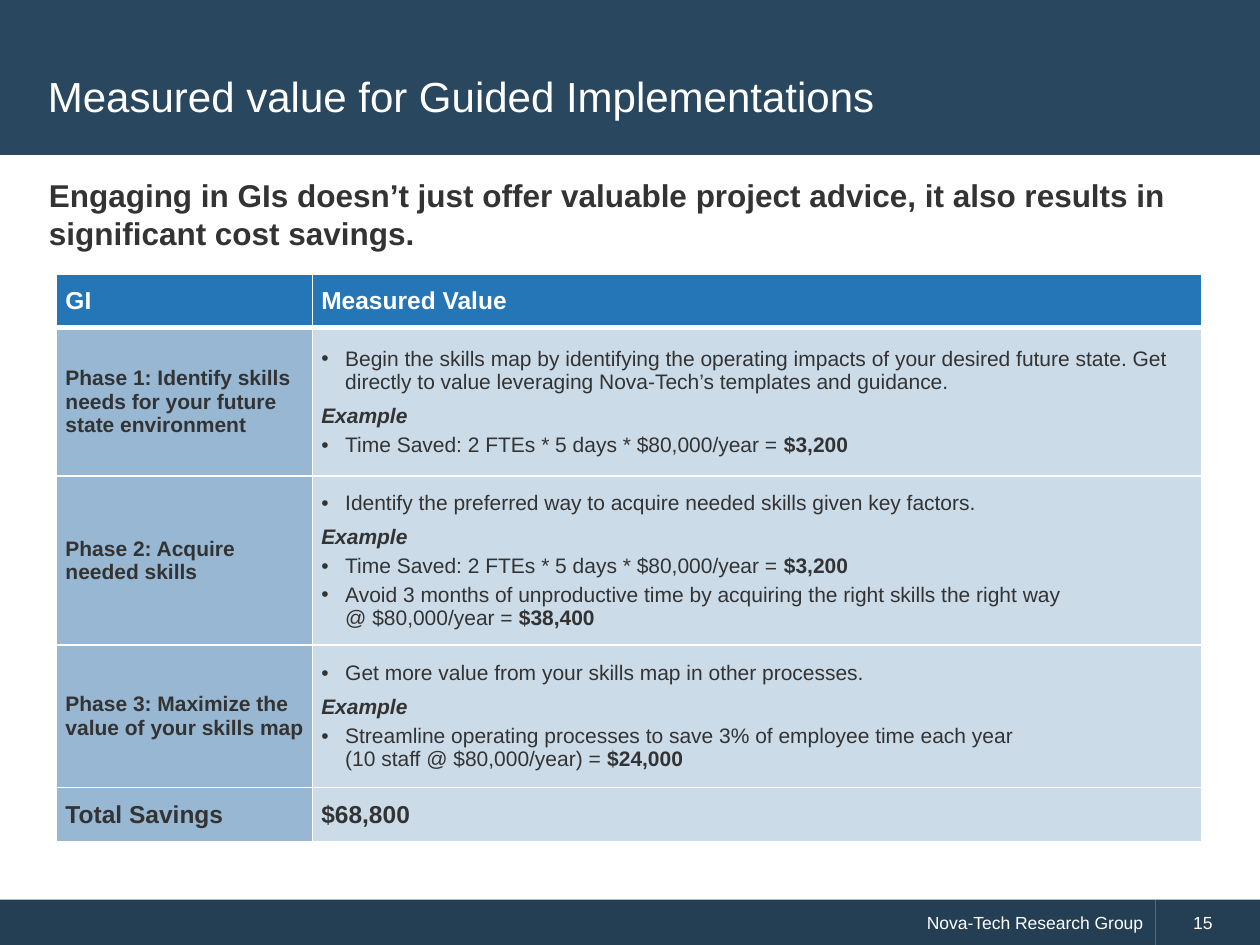
from lxml import etree
from pptx import Presentation
from pptx import util as u
from pptx.dml.color import RGBColor
from pptx.enum import shapes, text
from pptx.oxml import ns

COLORS = {
    "white": "FFFFFF", "ink": "333333", "title_band": "29475F", "footer": "243F54",
    "header": "2576B7", "phase": "97B7D2", "value": "CBDBE8",
}
FONT = "Arial"
COLUMN_WIDTHS = [2.03, 7.06]
ROW_HEIGHTS = [0.42, 1.18, 1.34, 1.13, 0.43]
TIME_SAVED = ("Time Saved: 2 FTEs * 5 days * $80,000/year = ", "$3,200")

# Each phase: name, introduction, then examples as (calculation, saving)
PHASES = [
    ("Phase 1: Identify skills needs for your future state environment",
     "Begin the skills map by identifying the operating impacts of your desired "
     "future state. Get directly to value leveraging Nova-Tech’s templates and guidance.",
     [TIME_SAVED]),
    ("Phase 2: Acquire needed skills",
     "Identify the preferred way to acquire needed skills given key factors.",
     [TIME_SAVED,
      ("Avoid 3 months of unproductive time by acquiring the right skills the right way "
       "\n@ $80,000/year = ", "$38,400")]),
    ("Phase 3: Maximize the value of your skills map",
     "Get more value from your skills map in other processes.",
     [("Streamline operating processes to save 3% of employee time each year "
       "\n(10 staff @ $80,000/year) = ", "$24,000")]),
]


def rgb(name):
    return RGBColor.from_string(COLORS[name])


def style(font, size, color, bold=None):
    font.name, font.size, font.bold = FONT, u.Pt(size), bold
    font.color.rgb = rgb(color)


def place(shape, left, top, width, height):
    shape.left, shape.top = u.Inches(left), u.Inches(top)
    shape.width, shape.height = u.Inches(width), u.Inches(height)


def add_band(slide, left, top, width, height, color, label="", align=text.PP_ALIGN.LEFT):
    band = slide.shapes.add_shape(
        shapes.MSO_SHAPE.RECTANGLE, *map(u.Inches, (left, top, width, height)))
    band.shadow.inherit = False
    band.fill.solid()
    band.fill.fore_color.rgb = rgb(color)
    band.line.fill.background()
    if label:
        band.text_frame.vertical_anchor = text.MSO_ANCHOR.MIDDLE
        paragraph = band.text_frame.paragraphs[0]
        paragraph.text, paragraph.alignment = label, align
        style(paragraph.font, 10, "white")
    return band


def add_title(slide, wording):
    title = slide.shapes.title
    place(title, 0.28, 0.28, 9.43, 0.96)
    title.text_frame.vertical_anchor = text.MSO_ANCHOR.MIDDLE
    paragraph = title.text_frame.paragraphs[0]
    paragraph.text, paragraph.alignment = wording, text.PP_ALIGN.LEFT
    style(paragraph.font, 24, "white")


def add_heading(slide, wording):
    heading = slide.shapes.add_textbox(*map(u.Inches, (0.29, 1.35, 9.43, 0.72)))
    heading.text_frame.word_wrap = True
    paragraph = heading.text_frame.paragraphs[0]
    paragraph.text, paragraph.space_before = wording, u.Pt(3.6)
    style(paragraph.font, 18, "ink", True)


def add_borders(cell, top, bottom):
    properties = cell._tc.get_or_add_tcPr()
    for side, points in (("L", 1), ("R", 1), ("T", top), ("B", bottom)):
        line = etree.SubElement(properties, ns.qn(f"a:ln{side}"), w=str(u.Pt(points)))
        fill = etree.SubElement(line, ns.qn("a:solidFill"))
        etree.SubElement(fill, ns.qn("a:srgbClr"), val=COLORS["white"])


def format_cell(cell, color, row):
    cell.vertical_anchor = text.MSO_ANCHOR.MIDDLE
    cell.margin_left = cell.margin_right = u.Inches(0.07)
    cell.margin_top = cell.margin_bottom = 0
    add_borders(cell, top=3 if row == 1 else 1, bottom=3 if row == 0 else 1)
    cell.fill.solid()
    cell.fill.fore_color.rgb = rgb(color)


def write_label(cell, wording, size, color="ink", space_after=None):
    paragraph = cell.text_frame.paragraphs[0]
    paragraph.text = wording
    if space_after:
        paragraph.space_after = u.Pt(space_after)
    style(paragraph.font, size, color, True)


def add_bullet(paragraph):
    properties = paragraph._p.get_or_add_pPr()
    properties.set("marL", str(u.Inches(0.19)))
    properties.set("indent", str(u.Inches(-0.19)))
    etree.SubElement(properties, ns.qn("a:buFont"), typeface=FONT)
    etree.SubElement(properties, ns.qn("a:buChar"), char="•")


def write_bullet(paragraph, wording, saving="", space_after=3):
    add_bullet(paragraph)
    paragraph.space_after = u.Pt(space_after)
    style(paragraph.font, 12, "ink")
    for number, line in enumerate(wording.split("\n")):
        if number:
            paragraph.add_line_break()
        run = paragraph.add_run()
        run.text, run.font.bold = line, False
    if saving:
        run = paragraph.add_run()
        run.text, run.font.bold = saving, True


def write_value(cell, introduction, examples):
    frame = cell.text_frame
    write_bullet(frame.paragraphs[0], introduction, space_after=6)
    example = frame.add_paragraph()
    example.text, example.space_after = "Example", u.Pt(3)
    style(example.font, 12, "ink", True)
    example.font.italic = True
    for calculation, saving in examples:
        write_bullet(frame.add_paragraph(), calculation, saving)


def add_savings_table(slide):
    table = slide.shapes.add_table(
        len(ROW_HEIGHTS), len(COLUMN_WIDTHS), u.Inches(0.45), u.Inches(2.18),
        u.Inches(sum(COLUMN_WIDTHS)), u.Inches(sum(ROW_HEIGHTS))).table
    for column, width in zip(table.columns, COLUMN_WIDTHS):
        column.width = u.Inches(width)
    for number, height in enumerate(ROW_HEIGHTS):
        table.rows[number].height = u.Inches(height)
        fills = ("phase", "value") if number else ("header", "header")
        for cell, color in zip(table.rows[number].cells, fills):
            format_cell(cell, color, number)

    # Header, phases and total
    for column, wording in enumerate(("GI", "Measured Value")):
        write_label(table.cell(0, column), wording, 14, "white")
    for row, (phase, introduction, examples) in enumerate(PHASES, start=1):
        write_label(table.cell(row, 0), phase, 12)
        write_value(table.cell(row, 1), introduction, examples)
    total_row = len(ROW_HEIGHTS) - 1
    write_label(table.cell(total_row, 0), "Total Savings", 14)
    write_label(table.cell(total_row, 1), "$68,800", 14, space_after=6)


def main():
    presentation = Presentation()
    presentation.slide_width, presentation.slide_height = u.Inches(10), u.Inches(7.5)
    slide = presentation.slides.add_slide(presentation.slide_layouts[5])

    # Title on its band, which goes behind the placeholder
    title_band = add_band(slide, 0, 0, 10, 1.23, "title_band")
    slide.shapes._spTree.insert(2, title_band._element)
    add_title(slide, "Measured value for Guided Implementations")

    # Footer
    add_band(slide, 0, 7.14, 9.17, 0.37, "footer", "Nova-Tech Research Group",
             text.PP_ALIGN.RIGHT)
    page_number = add_band(slide, 9.17, 7.14, 0.83, 0.37, "footer", "15")
    page_number.text_frame.margin_left = u.Inches(0.3)

    # Content
    add_savings_table(slide)
    add_heading(slide, "Engaging in GIs doesn’t just offer valuable project advice, "
                       "it also results in significant cost savings.")
    presentation.save("out.pptx")


if __name__ == "__main__":
    main()
